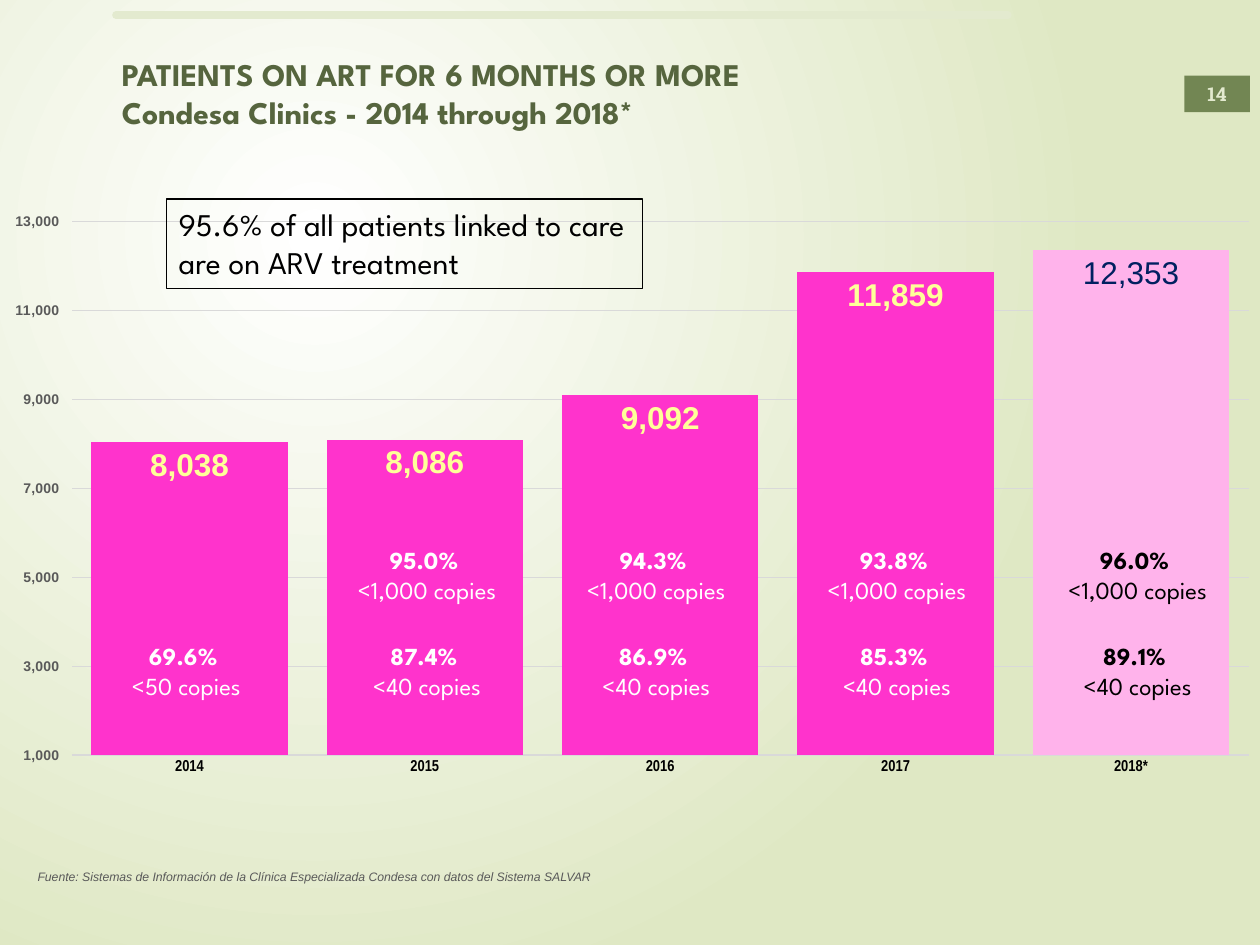
"""Build a slide charting patients on ART at the Condesa Clinics, 2014 to 2018."""
from lxml import etree
from pptx import Presentation
from pptx import util as u
from pptx.chart.data import CategoryChartData
from pptx.dml.color import RGBColor
from pptx.enum import chart as ch, shapes, text
from pptx.oxml import parse_xml
from pptx.oxml.ns import qn

COLORS = {
    "white": "FFFFFF", "black": "000000", "sage": "DFE8C4", "rule": "E3EACF",
    "badge": "728653", "title": "56653E", "gray": "595959", "grid": "D9D9D9",
    "pink": "FF33CC", "pale_pink": "FFB3EB", "yellow": "FFFF99", "navy": "002060",
}
TITLE = ["PATIENTS ON ART FOR 6 MONTHS OR MORE", "Condesa Clinics - 2014 through 2018*"]
CALLOUT = "95.6% of all patients linked to care are on ARV treatment"
SOURCE = ("Fuente: Sistemas de Información de la Clínica Especializada Condesa "
          "con datos del Sistema SALVAR")
PATIENTS = {"2014": 8038, "2015": 8086, "2016": 9092, "2017": 11859, "2018*": 12353}
SUPPRESSION = [
    (1.48, "white", None, ("69.6% ", "<50 copies")),
    (3.39, "white", ("95.0% ", "<1,000 copies"), ("87.4% ", "<40 copies")),
    (5.21, "white", ("94.3% ", "<1,000 copies"), ("86.9% ", "<40 copies")),
    (7.12, "white", ("93.8% ", "<1,000 copies"), ("85.3% ", "<40 copies")),
    (9.03, "black", ("96.0% ", "<1,000 copies"), ("89.1% ", "<40 copies")),
]
BANDS = [(4.28, 1.5), (5.04, 1.23)]
PLOT = {"x": 0.057, "y": 0.074, "w": 0.934, "h": 0.766}


def rgb(name):
    return RGBColor.from_string(COLORS[name])


def style(font, size, color, face="League Spartan", bold=False, italic=False):
    font.size, font.name = u.Pt(size), face
    font.bold, font.italic = bold, italic
    font.color.rgb = rgb(color)


def write(shape, lines, bold_lines=(), wrap=True, align="LEFT", anchor="TOP", **look):
    frame = shape.text_frame
    frame.word_wrap = wrap
    frame.vertical_anchor = getattr(text.MSO_ANCHOR, anchor)
    for index, line in enumerate(lines):
        para = frame.add_paragraph() if index else frame.paragraphs[0]
        para.alignment = getattr(text.PP_ALIGN, align)
        span = para.add_run()
        span.text = line
        style(span.font, bold=index in bold_lines, **look)


def add_text(page, place, lines, **look):
    write(page.shapes.add_textbox(*map(u.Inches, place)), lines, **look)


def add_box(page, place, lines, fill=None, line=None, **look):
    box = page.shapes.add_shape(shapes.MSO_SHAPE.RECTANGLE, *map(u.Inches, place))
    box.shadow.inherit = False
    if fill:
        box.fill.solid()
        box.fill.fore_color.rgb = rgb(fill)
    else:
        box.fill.background()
    if line:
        box.line.color.rgb = rgb(line)
        box.line.width = u.Pt(0.75)
    else:
        box.line.fill.background()
    write(box, lines, **look)


def paint_background(page):
    fill = page.background.fill
    fill.solid()
    solid = page._element.find(".//" + qn("a:solidFill"))
    stops = "".join(
        f'<a:gs pos="{pos}"><a:srgbClr val="{COLORS[name]}"/></a:gs>'
        for pos, name in ((0, "white"), (100000, "sage")))
    solid.getparent().replace(solid, parse_xml(
        '<a:gradFill xmlns:a="http://schemas.openxmlformats.org/drawingml/2006/main" '
        f'rotWithShape="1"><a:gsLst>{stops}</a:gsLst><a:path path="circle">'
        '<a:fillToRect l="50000" t="50000" r="100000" b="100000"/></a:path></a:gradFill>'))


def add_rule(page):
    rule = page.shapes.add_connector(
        shapes.MSO_CONNECTOR.STRAIGHT, *map(u.Inches, (0.92, 0.12, 8, 0.12)))
    rule.line.color.rgb = rgb("rule")
    rule.line.width = u.Pt(4.25)
    rule.line._get_or_add_ln().set("cap", "rnd")
    etree.SubElement(rule._element.spPr, qn("a:effectLst"))


def set_plot_area(chart):
    area = chart._chartSpace.chart.plotArea
    for old in area.findall(qn("c:layout")):
        area.remove(old)
    layout = etree.Element(qn("c:layout"))
    manual = etree.SubElement(layout, qn("c:manualLayout"))
    settings = {"layoutTarget": "inner", "xMode": "edge", "yMode": "edge", **PLOT}
    for tag, value in settings.items():
        etree.SubElement(manual, qn("c:" + tag)).set("val", str(value))
    area.insert(0, layout)


def add_patient_chart(page):
    data = CategoryChartData(number_format="#,##0")
    data.categories = list(PATIENTS)
    data.add_series("Series 1", list(PATIENTS.values()))
    chart = page.shapes.add_chart(
        ch.XL_CHART_TYPE.COLUMN_STACKED, *map(u.Inches, (0, 1.35, 10, 5.53)), data).chart
    chart.has_legend = chart.has_title = False
    style(chart.font, 8, "black")
    set_plot_area(chart)

    years, scale = chart.category_axis, chart.value_axis
    for axis in (years, scale):
        axis.major_tick_mark = axis.minor_tick_mark = ch.XL_TICK_MARK.NONE
    style(years.tick_labels.font, 9, "black", "Arial Narrow", bold=True)
    years.format.line.color.rgb = rgb("grid")
    years.format.line.width = u.Pt(1)
    style(scale.tick_labels.font, 8, "gray", "Arial", bold=True)
    scale.tick_labels.number_format = "#,##0"
    scale.tick_labels.number_format_is_linked = False
    scale.tick_label_position = ch.XL_TICK_LABEL_POSITION.LOW
    scale.minimum_scale, scale.maximum_scale, scale.major_unit = 1000, 13000, 2000
    scale.format.line.fill.background()
    scale.major_gridlines.format.line.color.rgb = rgb("grid")
    scale.major_gridlines.format.line.width = u.Pt(0.75)

    plot = chart.plots[0]
    plot.gap_width, plot.overlap, plot.vary_by_categories = 20, 100, False
    series = plot.series[0]
    last = series.points[len(PATIENTS) - 1]
    for item, color in ((series, "pink"), (last, "pale_pink")):
        item.format.fill.solid()
        item.format.fill.fore_color.rgb = rgb(color)

    labels = series.data_labels
    labels.show_value = True
    labels.number_format, labels.number_format_is_linked = "#,##0", False
    labels.position = ch.XL_LABEL_POSITION.INSIDE_END
    style(labels.font, 18, "yellow", "Arial", bold=True)
    span = last.data_label.text_frame.paragraphs[0].add_run()
    span.text = f"{PATIENTS['2018*']:,}"
    style(span.font, 18, "navy", "Arial")
    last.data_label.position = ch.XL_LABEL_POSITION.INSIDE_END


def main():
    deck = Presentation()
    deck.slide_width, deck.slide_height = u.Inches(10), u.Inches(7.5)
    page = deck.slides.add_slide(deck.slide_layouts[6])
    paint_background(page)
    add_rule(page)
    add_box(page, (9.4, 0.6, 0.52, 0.29), ["14"], fill="badge", bold_lines=(0,),
            align="CENTER", anchor="MIDDLE", size=11, color="rule", face="Roboto Slab")
    add_patient_chart(page)
    add_text(page, (0.87, 0.39, 7, 0.71), TITLE, bold_lines=(0, 1), size=18, color="title")
    for center, color, *results in SUPPRESSION:
        for (top, width), lines in zip(BANDS, results):
            if lines:
                add_text(page, (center - width / 2, top, width, 0.57), lines,
                         bold_lines=(0,), wrap=False, align="CENTER", size=14, color=color)
    add_text(page, (0.2, 6.85, 8.5, 0.22), [SOURCE], size=7, color="gray",
             face="Arial", italic=True)
    add_box(page, (1.32, 1.58, 3.78, 0.71), [CALLOUT], line="black", size=18, color="black")
    deck.save("out.pptx")


if __name__ == "__main__":
    main()
